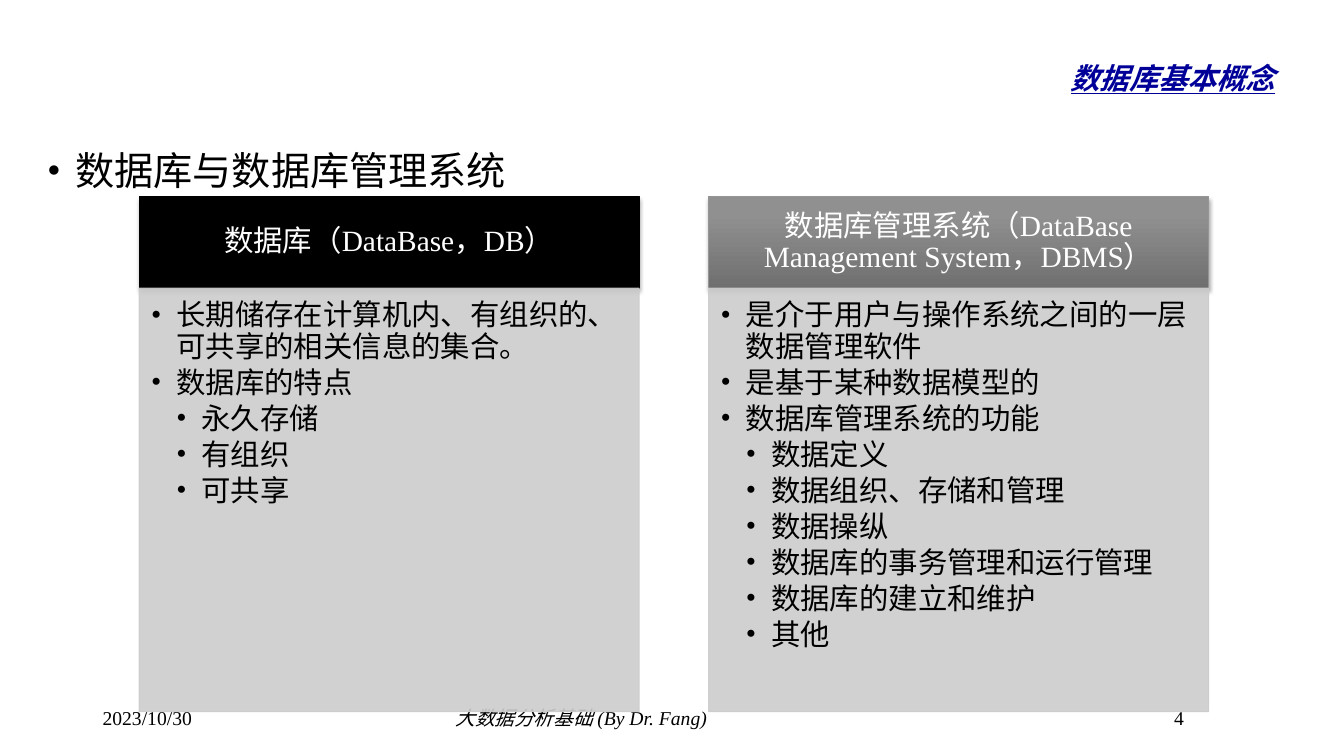
"""Build the slide on databases and database management systems."""
from dataclasses import dataclass
from typing import Any, Optional

from lxml import etree
from pptx import Presentation
from pptx.dml.color import RGBColor
from pptx.enum import dml, lang, shapes, text
from pptx.oxml import ns
from pptx.util import Pt


@dataclass(frozen=True)
class Theme:
    """Colours, font and type sizes."""
    font: str = "Times New Roman"
    black: str = "000000"
    white: str = "FFFFFF"
    navy: str = "000099"
    panel: str = "CCCCCC"
    gray_line: str = "959595"
    gray_gradient: tuple[tuple[float, str], ...] = ((0, "6F6F6F"), (0.8, "909090"))
    title: float = 36
    topic: float = 28
    card: float = 21
    footer: float = 14


THEME = Theme()


@dataclass(frozen=True)
class Box:
    """Place of an element in points."""
    left: float
    top: float
    width: float
    height: float

    def lengths(self) -> list[Pt]:
        """Return the four lengths for python-pptx."""
        return [Pt(value) for value in (self.left, self.top, self.width, self.height)]


@dataclass(frozen=True)
class Style:
    """Look of a paragraph."""
    size: float
    color: str = THEME.black
    bold: bool = False
    italic: bool = False
    underline: bool = False
    baseline: int = 0
    align: text.PP_ALIGN = text.PP_ALIGN.LEFT
    line_spacing: float = 1.0
    space_after: float = 0
    level: int = 0
    margin: float = 0
    hanging: float = 0


@dataclass(frozen=True)
class Label:
    """A line of text in its own box."""
    content: str
    box: Box
    style: Style
    anchor: text.MSO_ANCHOR = text.MSO_ANCHOR.TOP


@dataclass(frozen=True)
class Card:
    """A heading above a panel of (level, text) items."""
    heading: str
    line: str
    gradient: Optional[tuple[tuple[float, str], ...]]
    items: tuple[tuple[int, str], ...]


CARD_LEFT, CARD_STEP, CARD_WIDTH = 99.4, 406.8, 357.1
HEADING_TOP, HEADING_HEIGHT, PANEL_HEIGHT = 140.4, 65.5, 302.4
HEADING_INSETS = (11.5, 6.5, 11.5, 6.5)
PANEL_INSETS = (8.6, 8.6, 11.5, 13)
FOOTER_TOP, FOOTER_HEIGHT = 500.4, 28.8
ITEM_INDENT = 18

HEADING = Style(THEME.card, THEME.white, align=text.PP_ALIGN.CENTER, line_spacing=0.9)
FOOTER = Style(THEME.footer)

LABELS = (
    Label("数据库基本概念", Box(139.7, 3.6, 778.3, 79.2),
          Style(THEME.title, THEME.navy, True, True, True, -25000, text.PP_ALIGN.RIGHT),
          text.MSO_ANCHOR.MIDDLE),
    Label("数据库与数据库管理系统", Box(26.6, 94.3, 907.2, 402.5),
          Style(THEME.topic, line_spacing=1.2, margin=20.2, hanging=20.2)),
    Label("4", Box(831.6, FOOTER_TOP, 62.6, FOOTER_HEIGHT), FOOTER),
    Label("大数据分析基础 (By Dr. Fang)", Box(318.2, FOOTER_TOP, 462.2, FOOTER_HEIGHT),
          Style(THEME.footer, italic=True)),
    Label("2023/10/30", Box(66.2, FOOTER_TOP, 216, FOOTER_HEIGHT), FOOTER),
)

CARDS = (
    Card("数据库（DataBase，DB）", THEME.black, None, (
        (1, "长期储存在计算机内、有组织的、可共享的相关信息的集合。"),
        (1, "数据库的特点"),
        (2, "永久存储"),
        (2, "有组织"),
        (2, "可共享"),
    )),
    Card("数据库管理系统（DataBase Management System，DBMS）",
         THEME.gray_line, THEME.gray_gradient, (
             (1, "是介于用户与操作系统之间的一层数据管理软件"),
             (1, "是基于某种数据模型的"),
             (1, "数据库管理系统的功能"),
             (2, "数据定义"),
             (2, "数据组织、存储和管理"),
             (2, "数据操纵"),
             (2, "数据库的事务管理和运行管理"),
             (2, "数据库的建立和维护"),
             (2, "其他"),
         )),
)


def apply(target: Any, values: dict[str, Any]) -> None:
    """Set every attribute named in values on target."""
    for name, value in values.items():
        setattr(target, name, value)


def add_element(parent: Any, tag: str, **attributes: Any) -> Any:
    """Append a drawing element to parent."""
    return etree.SubElement(parent, ns.qn(tag), {k: str(v) for k, v in attributes.items()})


def item_style(level: int) -> Style:
    """Return the bulleted style of a panel item."""
    return Style(THEME.card, line_spacing=0.9, space_after=3, level=level,
                 margin=ITEM_INDENT * level, hanging=ITEM_INDENT)


def write(shape: Any, lines: list[tuple[str, Style]], anchor: text.MSO_ANCHOR,
          insets: tuple[float, ...] = (7.2, 3.6, 7.2, 3.6)) -> None:
    """Fill a shape with styled paragraphs."""
    frame = shape.text_frame
    sides = ("margin_left", "margin_top", "margin_right", "margin_bottom")
    apply(frame, {"word_wrap": True, "vertical_anchor": anchor,
                  **dict(zip(sides, map(Pt, insets)))})
    for index, (content, style) in enumerate(lines):
        paragraph = frame.add_paragraph() if index else frame.paragraphs[0]
        apply(paragraph, {"alignment": style.align, "level": style.level,
                          "line_spacing": style.line_spacing,
                          "space_after": Pt(style.space_after)})
        if style.hanging:
            properties = paragraph._p.get_or_add_pPr()
            properties.set("marL", str(Pt(style.margin)))
            properties.set("indent", str(-Pt(style.hanging)))
            add_element(properties, "a:buFont", typeface=THEME.font)
            add_element(properties, "a:buChar", char="•")
        run = paragraph.add_run()
        run.text = content
        apply(run.font, {"name": THEME.font, "size": Pt(style.size), "bold": style.bold,
                         "italic": style.italic, "underline": style.underline,
                         "language_id": lang.MSO_LANGUAGE_ID.SIMPLIFIED_CHINESE})
        run.font.color.rgb = RGBColor.from_string(style.color)
        if style.baseline:
            run._r.get_or_add_rPr().set("baseline", str(style.baseline))


def add_label(slide: Any, label: Label) -> None:
    """Add one text box."""
    shape = slide.shapes.add_textbox(*label.box.lengths())
    write(shape, [(label.content, label.style)], label.anchor)


def add_block(slide: Any, box: Box, color: str) -> Any:
    """Add a rectangle filled and outlined in one colour."""
    shape = slide.shapes.add_shape(shapes.MSO_SHAPE.RECTANGLE, *box.lengths())
    shape.shadow.inherit = False
    for fill in (shape.fill, shape.line.fill):
        fill.solid()
        fill.fore_color.rgb = RGBColor.from_string(color)
    apply(shape.line, {"width": Pt(0.75), "dash_style": dml.MSO_LINE.SOLID})
    return shape


def add_card(slide: Any, card: Card, left: float) -> None:
    """Add a shadowed heading and its translucent panel."""
    heading = add_block(slide, Box(left, HEADING_TOP, CARD_WIDTH, HEADING_HEIGHT), card.line)
    if card.gradient:
        heading.fill.gradient()
        heading.fill.gradient_angle = 90
        for stop, (position, color) in zip(heading.fill.gradient_stops, card.gradient):
            stop.position = position
            stop.color.rgb = RGBColor.from_string(color)
    effects = heading._element.spPr.find(ns.qn("a:effectLst"))
    shadow = add_element(effects, "a:outerShdw", blurRad=Pt(3.1), dist=Pt(1.8),
                         dir=5400000, rotWithShape=0)
    add_element(add_element(shadow, "a:srgbClr", val=THEME.black), "a:alpha", val=35000)
    write(heading, [(card.heading, HEADING)], text.MSO_ANCHOR.MIDDLE, HEADING_INSETS)

    panel_box = Box(left, HEADING_TOP + HEADING_HEIGHT, CARD_WIDTH, PANEL_HEIGHT)
    panel = add_block(slide, panel_box, THEME.panel)
    for color in panel._element.spPr.iter(ns.qn("a:srgbClr")):
        add_element(color, "a:alpha", val=90000)
    lines = [(content, item_style(level)) for level, content in card.items]
    write(panel, lines, text.MSO_ANCHOR.TOP, PANEL_INSETS)


def main() -> None:
    """Create and save the presentation."""
    presentation = Presentation()
    apply(presentation, {"slide_width": Pt(960), "slide_height": Pt(540)})
    slide = presentation.slides.add_slide(presentation.slide_layouts[6])
    for label in LABELS:
        add_label(slide, label)
    for index, card in enumerate(CARDS):
        add_card(slide, card, CARD_LEFT + index * CARD_STEP)
    presentation.save("out.pptx")


if __name__ == "__main__":
    main()
